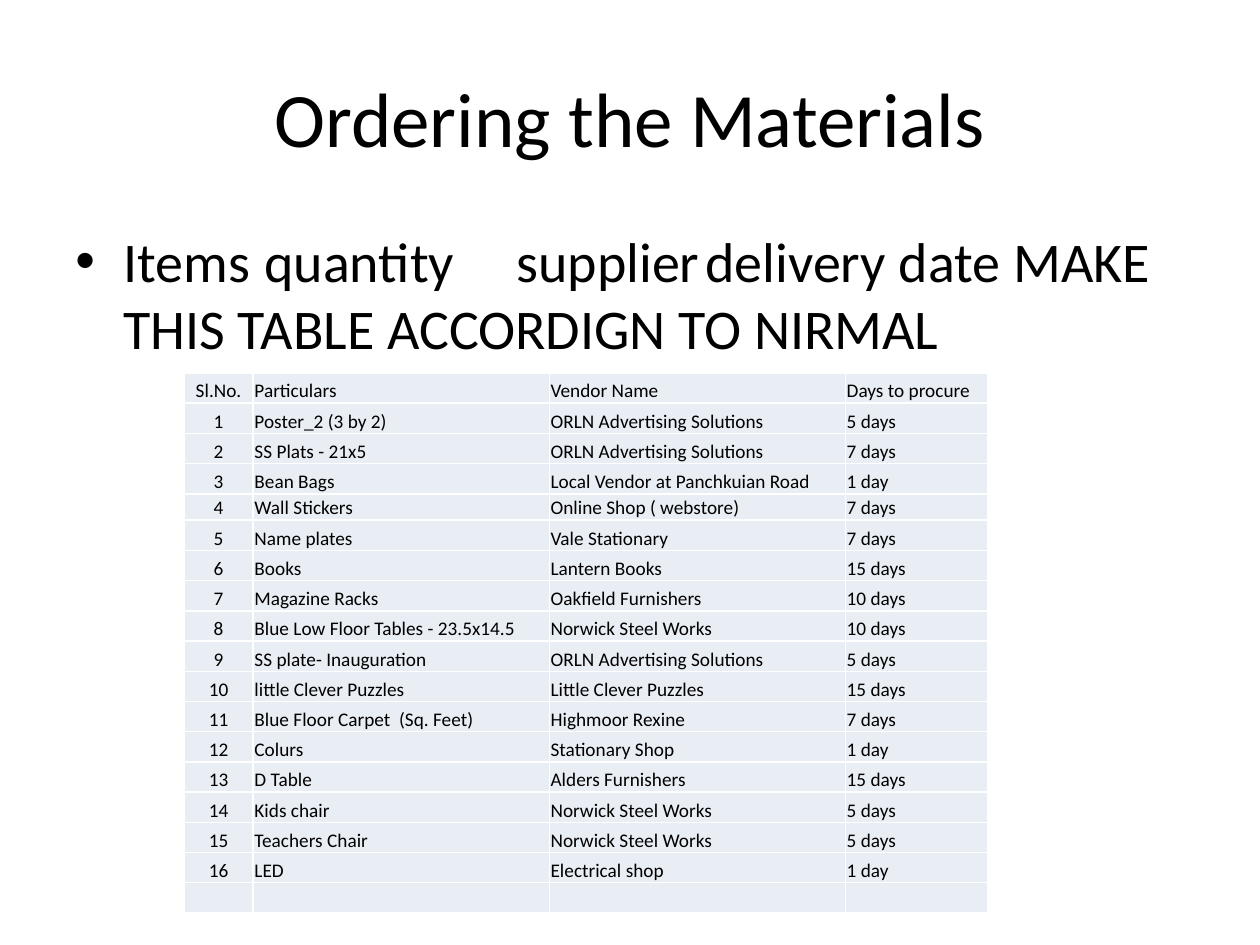
from lxml.etree import SubElement
from pptx import Presentation
from pptx.dml.color import RGBColor
from pptx.enum.text import MSO_ANCHOR, PP_ALIGN
from pptx.oxml.ns import qn
from pptx.util import Inches, Pt

ROWS = [
    ("Sl.No.", "Particulars", "Vendor Name", "Days to procure"),
    ("1", "Poster_2 (3 by 2)", "ORLN Advertising Solutions", "5 days"),
    ("2", "SS Plats - 21x5", "ORLN Advertising Solutions", "7 days"),
    ("3", "Bean Bags", "Local Vendor at Panchkuian Road", "1 day"),
    ("4", "Wall Stickers", "Online Shop ( webstore)", "7 days"),
    ("5", "Name plates", "Vale Stationary", "7 days"),
    ("6", "Books", "Lantern Books", "15 days"),
    ("7", "Magazine Racks", "Oakfield Furnishers", "10 days"),
    ("8", "Blue Low Floor Tables - 23.5x14.5", "Norwick Steel Works", "10 days"),
    ("9", "SS plate- Inauguration", "ORLN Advertising Solutions", "5 days"),
    ("10", "little Clever Puzzles", "Little Clever Puzzles", "15 days"),
    ("11", "Blue Floor Carpet  (Sq. Feet)", "Highmoor Rexine", "7 days"),
    ("12", "Colurs", "Stationary Shop", "1 day"),
    ("13", "D Table", "Alders Furnishers", "15 days"),
    ("14", "Kids chair", "Norwick Steel Works", "5 days"),
    ("15", "Teachers Chair", "Norwick Steel Works", "5 days"),
    ("16", "LED", "Electrical shop", "1 day"),
    ("", "", "", ""),
]
WIDTHS = [0.55, 2.35, 2.35, 1.13]
HEIGHTS = [0.21 if row[0] == "4" else 0.24 for row in ROWS]


def color(code):
    return RGBColor.from_string(code)


class Deck:
    font, ink, pale, rule = "Calibri", "000000", "E9EDF4", "FFFFFF"

    def __init__(self, show):
        self.slide = show.slides.add_slide(show.slide_layouts[6])

    def style(self, para, size, align=PP_ALIGN.LEFT):
        para.alignment = align
        for run in para.runs:
            run.font.name = self.font
            run.font.size = Pt(size)
            run.font.color.rgb = color(self.ink)

    def text(self, words, box, size, align=PP_ALIGN.LEFT, anchor=MSO_ANCHOR.TOP):
        frame = self.slide.shapes.add_textbox(*map(Inches, box)).text_frame
        frame.word_wrap = True
        frame.vertical_anchor = anchor
        frame.text = words
        self.style(frame.paragraphs[0], size, align)
        return frame.paragraphs[0]

    def bullet(self, words, box, size):
        props = self.text(words, box, size)._p.get_or_add_pPr()
        props.set("marL", str(Inches(0.38)))
        props.set("indent", str(-Inches(0.38)))
        space = SubElement(props, qn("a:spcBef"))
        SubElement(space, qn("a:spcPct"), val="20000")
        SubElement(props, qn("a:buFont"), typeface="Arial")
        SubElement(props, qn("a:buChar"), char="•")

    def border(self, cell):
        """Draw a thin rule on all four sides; call before the fill is set."""
        props = cell._tc.get_or_add_tcPr()
        for side in ("lnL", "lnR", "lnT", "lnB"):
            line = SubElement(props, qn(f"a:{side}"), w=str(Pt(1)))
            fill = SubElement(line, qn("a:solidFill"))
            SubElement(fill, qn("a:srgbClr"), val=self.rule)

    def cell(self, cell, words, size, align):
        cell.margin_left = cell.margin_right = cell.margin_top = Inches(0.01)
        cell.margin_bottom = 0
        cell.vertical_anchor = MSO_ANCHOR.BOTTOM
        self.border(cell)
        cell.fill.solid()
        cell.fill.fore_color.rgb = color(self.pale)
        para = cell.text_frame.paragraphs[0]
        if words:
            para.text = words
        else:
            # An empty cell needs the small size too, or its row grows.
            para._p.get_or_add_endParaRPr().set("sz", str(size * 100))
        self.style(para, size, align)

    def table(self, rows, left, top, widths, heights, size):
        box = map(Inches, (left, top, sum(widths), sum(heights)))
        grid = self.slide.shapes.add_table(len(rows), len(widths), *box).table
        grid.first_row = grid.horz_banding = False
        for col, width in zip(grid.columns, widths):
            col.width = Inches(width)
        for line, height, row in zip(grid.rows, heights, rows):
            line.height = Inches(height)
            for i, words in enumerate(row):
                align = PP_ALIGN.LEFT if i else PP_ALIGN.CENTER
                self.cell(line.cells[i], words, size, align)


def main():
    show = Presentation()
    show.slide_width, show.slide_height = Inches(10), Inches(7.5)
    deck = Deck(show)
    deck.text("Ordering the Materials", (0.5, 0.3, 9, 1.25), 44,
              PP_ALIGN.CENTER, MSO_ANCHOR.MIDDLE)
    deck.bullet("Items\tquantity\tsupplier\tdelivery date "
                "MAKE THIS TABLE ACCORDIGN TO NIRMAL", (0.5, 1.75, 9.07, 5.62), 32)
    deck.table(ROWS, 1.46, 2.96, WIDTHS, HEIGHTS, 11)
    show.save("out.pptx")


if __name__ == "__main__":
    main()
